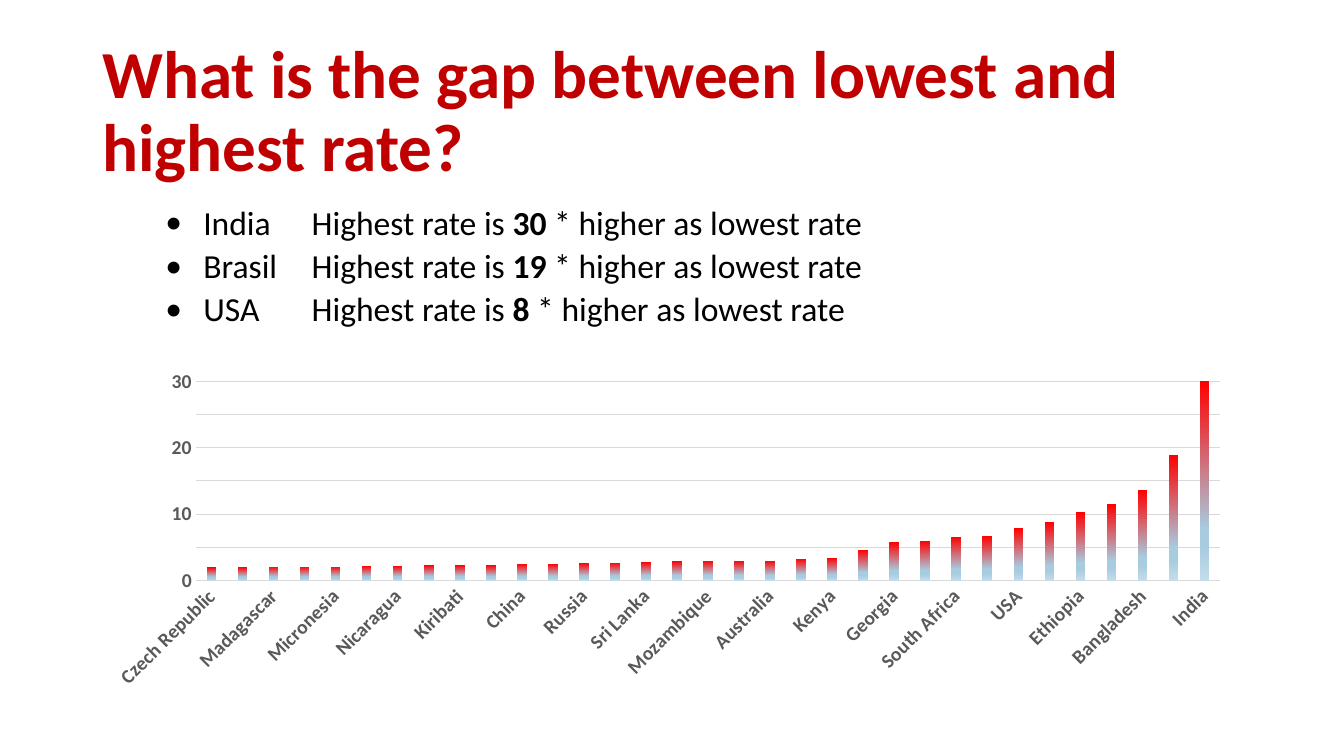
from lxml import etree
from pptx import Presentation
from pptx import util as u
from pptx.chart import data as chart_data
from pptx.dml.color import RGBColor
from pptx.enum import chart as chart_enum, text
from pptx.oxml import ns

COLOURS = {"title": "C00000", "body": "000000", "labels": "595959",
           "grid": "D9D9D9", "high": "FF0000", "low": "A7CBDF", "base": "C4DCEA"}
FONT = "Calibri"

GAPS = [("India", "30"), ("Brasil", "19"), ("USA", "8")]
RATES = {
    "Czech Republic": 2, "Costa Rica": 2, "Madagascar": 2.1, "United Kingdom": 2.1,
    "Micronesia": 2.1, "Haiti": 2.2, "Nicaragua": 2.2, "Estonia": 2.3,
    "Kiribati": 2.3, "Mexico": 2.3, "China": 2.5, "Fiji": 2.5, "Russia": 2.6,
    "Indonesia": 2.7, "Sri Lanka": 2.8, "Panama": 2.9, "Mozambique": 3, "Cuba": 3,
    "Australia": 3, "Netherlands": 3.3, "Kenya": 3.4, "Ecuador": 4.6, "Georgia": 5.8,
    "Togo": 6, "South Africa": 6.6, "St. Vincent and the Grenadines": 6.7, "USA": 7.9,
    "Lesotho": 8.8, "Ethiopia": 10.3, "Tanzania": 11.5, "Bangladesh": 13.6,
    "Brasil": 18.9, "India": 30.2,
}


def set_font(font, size, colour, bold=None):
    font.name = FONT
    font.size = u.Pt(size)
    font.bold = bold
    font.color.rgb = RGBColor.from_string(COLOURS[colour])


def place(box, left, top, width, height):
    box.left, box.top, box.width, box.height = map(u.Pt, (left, top, width, height))
    box.text_frame.auto_size = text.MSO_AUTO_SIZE.NONE


deck = Presentation()
deck.slide_width, deck.slide_height = u.Pt(960), u.Pt(540)
page = deck.slides.add_slide(deck.slide_layouts[1])

# Title
title = page.shapes.title
place(title, 66, 28.75, 828, 104.4)
title.text_frame.vertical_anchor = text.MSO_ANCHOR.MIDDLE
para = title.text_frame.paragraphs[0]
para.text = "What is the gap between lowest and highest rate?"
para.alignment = text.PP_ALIGN.LEFT
para.line_spacing = 0.9
set_font(para.font, 48, "title", True)

# Country comparison list
body = page.placeholders[1]
place(body, 66, 143.75, 828, 342.6)
for index, (country, factor) in enumerate(GAPS):
    frame = body.text_frame
    para = frame.add_paragraph() if index else frame.paragraphs[0]
    para.level = 1
    para.line_spacing = 0.9
    para.space_before = u.Pt(5 if index else 0)
    properties = para._p.get_or_add_pPr()
    properties.set("marL", str(u.Pt(72)))
    properties.set("indent", str(u.Pt(-27)))
    etree.SubElement(properties, ns.qn("a:buFont"), typeface=FONT)
    etree.SubElement(properties, ns.qn("a:buChar"), char="•")
    set_font(para.font, 24, "body")
    para.add_run().text = f"{country}\t Highest rate is "
    span = para.add_run()
    span.text = factor
    span.font.bold = True
    para.add_run().text = " * higher as lowest rate"

# Rate gap chart
rates = chart_data.CategoryChartData()
rates.categories = list(RATES)
rates.add_series("Series 1", list(RATES.values()))
chart = page.shapes.add_chart(
    chart_enum.XL_CHART_TYPE.COLUMN_CLUSTERED,
    u.Pt(66), u.Pt(259), u.Pt(822), u.Pt(238), rates).chart
chart.has_legend = False
chart.has_title = False
set_font(chart.font, 10, "body")

plot = chart.plots[0]
plot.gap_width = 219
plot.overlap = -27
plot.vary_by_categories = False

fill = plot.series[0].format.fill
fill.gradient()
fill.gradient_angle = 270
stops = plot.series[0]._element.find(".//" + ns.qn("a:gsLst"))
for stop in list(stops):
    stops.remove(stop)
for percent, colour in [(0, "high"), (74, "low"), (83, "low"), (100, "base")]:
    stop = etree.SubElement(stops, ns.qn("a:gs"), pos=str(percent * 1000))
    etree.SubElement(stop, ns.qn("a:srgbClr"), val=COLOURS[colour])

countries, values = chart.category_axis, chart.value_axis
# An explicit angle of 0 keeps every value label visible
for axis, degrees in ((countries, -45), (values, 0)):
    axis.major_tick_mark = axis.minor_tick_mark = chart_enum.XL_TICK_MARK.NONE
    set_font(axis.tick_labels.font, 14, "labels", True)
    label_body = axis._element.find(ns.qn("c:txPr")).find(ns.qn("a:bodyPr"))
    label_body.set("rot", str(degrees * 60000))
    label_body.set("vert", "horz")
values.minimum_scale, values.maximum_scale, values.major_unit = 0, 30, 5
values.tick_labels.number_format = "#,##0"
values.tick_labels.number_format_is_linked = False
values.format.line.fill.background()
for line in (countries.format.line, values.major_gridlines.format.line):
    line.color.rgb = RGBColor.from_string(COLOURS["grid"])
    line.width = u.Pt(0.75)

deck.save("out.pptx")
